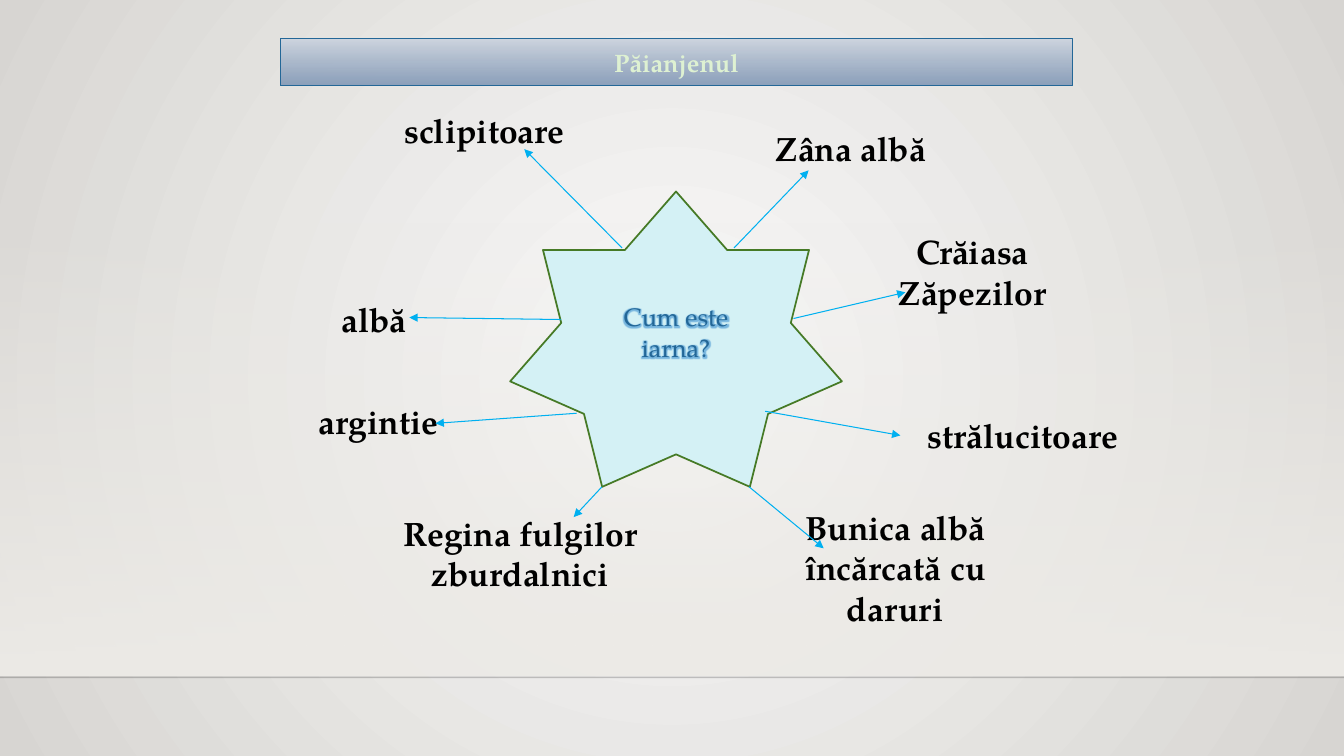
from dataclasses import dataclass

from lxml import etree
from pptx import Presentation
from pptx.dml.color import RGBColor
from pptx.enum.shapes import MSO_CONNECTOR, MSO_SHAPE
from pptx.enum.text import MSO_ANCHOR, PP_ALIGN
from pptx.oxml.ns import qn
from pptx.util import Inches, Pt

RECTANGLE = MSO_SHAPE.RECTANGLE
STAR = MSO_SHAPE.STAR_7_POINT
STRAIGHT = MSO_CONNECTOR.STRAIGHT
MIDDLE = MSO_ANCHOR.MIDDLE
CENTER = PP_ALIGN.CENTER


@dataclass(frozen=True)
class Theme:
    font: str = "TeX Gyre Pagella"
    heading_size: int = 18
    answer_size: int = 24
    ink: str = "000000"
    backdrop: tuple = (("FAFAF9", 100), ("D7D5D2", 100))
    floor: tuple = (("EDEBE7", 0), ("EDEBE7", 100))
    horizon: str = "000001"
    banner: tuple = (("CED5DF", 100), ("849AB7", 92))
    banner_text: str = "DEF1D2"
    blue: str = "236797"
    glow: str = "61A8DA"
    star: str = "D4F1F5"
    star_edge: str = "467A26"
    arrow: str = "00B0F0"


class SpiderMap:
    def __init__(self, slide, theme):
        self.slide = slide
        self.theme = theme

    def set_alpha(self, color_element, percent):
        alpha = etree.SubElement(color_element, qn("a:alpha"))
        alpha.set("val", str(percent * 1000))

    def gradient(self, fill, colors):
        fill.gradient()
        for position, (stop, (color, opacity)) in enumerate(zip(fill.gradient_stops, colors)):
            stop.position = position
            stop.color.rgb = RGBColor.from_string(color)
        fill.gradient_angle = 270

    def fade(self, element, colors):
        for stop, (color, opacity) in zip(element.iter(qn("a:gs")), colors):
            if opacity < 100:
                self.set_alpha(stop[0], opacity)

    def background(self):
        self.gradient(self.slide.background.fill, self.theme.backdrop)
        linear = next(self.slide.element.iter(qn("a:lin")))
        radial = etree.Element(qn("a:path"), path="circle")
        etree.SubElement(radial, qn("a:fillToRect"), l="50000", t="50000", r="50000", b="50000")
        linear.getparent().replace(linear, radial)

    def shape(self, kind, box, fill, edge=None, width=0.75):
        shape = self.slide.shapes.add_shape(kind, *map(Inches, box))
        shape.shadow.inherit = False
        if isinstance(fill, tuple):
            self.gradient(shape.fill, fill)
            self.fade(shape._element, fill)
        else:
            shape.fill.solid()
            shape.fill.fore_color.rgb = RGBColor.from_string(fill)
        if edge:
            shape.line.color.rgb = RGBColor.from_string(edge)
            shape.line.width = Pt(width)
        else:
            shape.line.fill.background()
        return shape

    def caption(self, shape, text, size, color, bold=True):
        frame = shape.text_frame
        frame.word_wrap = True
        frame.vertical_anchor = MIDDLE
        paragraph = frame.paragraphs[0]
        paragraph.alignment = CENTER
        run = paragraph.add_run()
        run.text = text
        run.font.name = self.theme.font
        run.font.size = Pt(size)
        run.font.bold = bold
        run.font.color.rgb = RGBColor.from_string(color)
        return run

    def glow(self, run, color):
        effects = etree.Element(qn("a:effectLst"))
        halo = etree.SubElement(effects, qn("a:glow"), rad="63500")
        tint = etree.SubElement(halo, qn("a:srgbClr"), val=color)
        self.set_alpha(tint, 80)
        next(run._r.iter(qn("a:solidFill"))).addnext(effects)

    def answer(self, text, box):
        label = self.slide.shapes.add_textbox(*map(Inches, box))
        self.caption(label, text, self.theme.answer_size, self.theme.ink)

    def line(self, start, end, color, width):
        line = self.slide.shapes.add_connector(STRAIGHT, *map(Inches, (*start, *end)))
        line.line.color.rgb = RGBColor.from_string(color)
        line.line.width = Pt(width)
        etree.SubElement(line._element.spPr, qn("a:effectLst"))
        return line

    def arrow(self, start, end):
        arrow = self.line(start, end, self.theme.arrow, 0.75)
        outline = arrow._element.spPr.find(qn("a:ln"))
        etree.SubElement(outline, qn("a:tailEnd"), type="triangle")

    def horizon(self, y):
        horizon = self.line((0, y), (13.33, y), self.theme.horizon, 1)
        self.set_alpha(next(horizon._element.spPr.iter(qn("a:srgbClr"))), 20)


ANSWERS = [
    ("albă", (2.59, 2.65, 2.24, 1.03), (5.56, 3.17), (4.06, 3.15)),
    ("sclipitoare", (3.72, 1.09, 2.17, 0.39), (6.17, 2.46), (5.2, 1.48)),
    ("Сrăiasa Zăpezilor", (8.65, 2.49, 1.99, 0.41), (7.87, 3.16), (8.98, 2.9)),
    ("Zâna albă", (7.36, 1.25, 2.16, 0.43), (7.28, 2.46), (8.02, 1.69)),
    ("strălucitoare", (8.93, 3.79, 2.43, 1.06), (7.59, 4.08), (8.93, 4.32)),
    ("argintie", (3.04, 3.93, 1.43, 0.5), (5.72, 4.1), (4.32, 4.2)),
    ("Regina fulgilor zburdalnici", (3.62, 5.14, 3.08, 0.7), (5.97, 4.83), (5.69, 5.13)),
    ("Bunica albă încărcată cu daruri", (7.59, 5.26, 2.58, 0.74), (7.43, 4.83), (8.17, 5.44)),
]


def main():
    presentation = Presentation()
    presentation.slide_width = Inches(13.33)
    presentation.slide_height = Inches(7.5)
    theme = Theme()
    spider = SpiderMap(presentation.slides.add_slide(presentation.slide_layouts[6]), theme)

    spider.background()
    spider.shape(RECTANGLE, (0, 2.2, 13.33, 4.5), theme.floor)
    spider.horizon(6.72)

    star = spider.shape(STAR, (5.06, 1.9, 3.29, 2.93), theme.star, theme.star_edge, 1.25)
    question = spider.caption(star, "Cum este iarna?", theme.heading_size, theme.blue, bold=False)
    spider.glow(question, theme.glow)

    for text, box, start, end in ANSWERS:
        spider.answer(text, box)
        spider.arrow(start, end)

    banner = spider.shape(RECTANGLE, (2.78, 0.38, 7.86, 0.47), theme.banner, theme.blue)
    spider.caption(banner, "Păianjenul", theme.heading_size, theme.banner_text)

    presentation.save("out.pptx")


if __name__ == "__main__":
    main()
